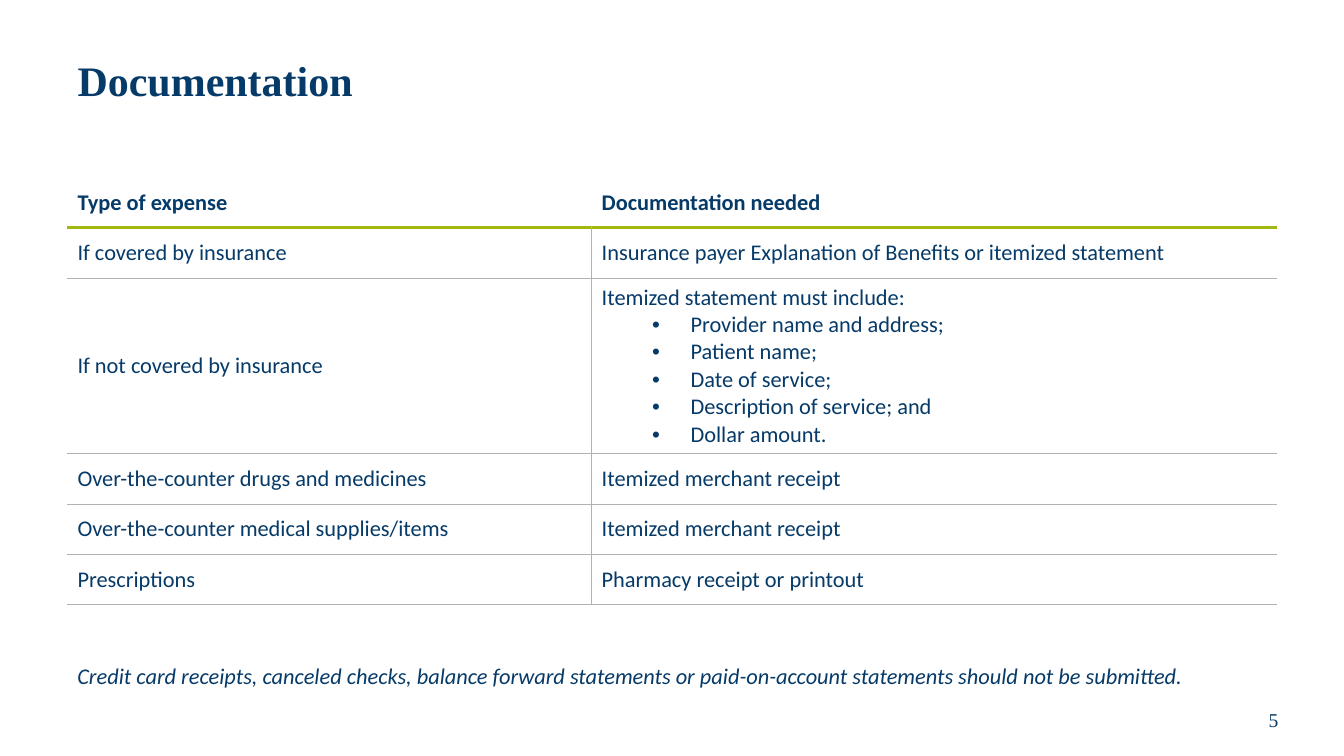
from dataclasses import dataclass

from lxml.etree import SubElement as Sub
from pptx import Presentation
from pptx.dml.color import RGBColor as RGB
from pptx.enum.text import MSO_ANCHOR as Anchor, MSO_AUTO_SIZE as Fit, PP_ALIGN as Align
from pptx.oxml.ns import qn
from pptx.util import Cm, Pt


@dataclass(frozen=True)
class Theme:
    ink: str = "063A68"
    rule: str = "B2B2B2"
    accent: str = "A0B810"
    serif: str = "Times New Roman"
    sans: str = "Calibri"
    title: int = 30
    body: int = 16
    page: int = 14
    thin: float = 0.5
    thick: float = 2.25


THEME = Theme()
LEFT, WIDTH = Cm(1.7), Cm(30.48)
COLS = (Cm(13.21), Cm(17.27))
ROW, TALL = Cm(1.27), Cm(4.42)
ROWS = (
    ("Type of expense", "Documentation needed"),
    ("If covered by insurance", "Insurance payer Explanation of Benefits or itemized statement"),
    ("If not covered by insurance", (
        "Itemized statement must include:",
        "Provider name and address;",
        "Patient name;",
        "Date of service;",
        "Description of service; and",
        "Dollar amount.",
    )),
    ("Over-the-counter drugs and medicines", "Itemized merchant receipt"),
    ("Over-the-counter medical supplies/items", "Itemized merchant receipt"),
    ("Prescriptions", "Pharmacy receipt or printout"),
)


def bullet(para):
    para.level = 1
    props = para._p.get_or_add_pPr()
    props.set("marL", str(Cm(2.24)))
    props.set("indent", str(Cm(-0.97)))
    Sub(props, qn("a:buFont"), typeface="Arial")
    Sub(props, qn("a:buChar"), char="•")


def write(frame, text, size=THEME.body, face=THEME.sans, bold=False,
          italic=False, align=Align.LEFT, space=None):
    lines = (text,) if isinstance(text, str) else text
    for index, line in enumerate(lines):
        para = frame.add_paragraph() if index else frame.paragraphs[0]
        para.alignment = align
        if space:
            para.line_spacing = space
        if index:
            bullet(para)
        run = para.add_run()
        run.text = line
        font = run.font
        font.size, font.name = Pt(size), face
        font.bold, font.italic = bold, italic
        font.color.rgb = RGB.from_string(THEME.ink)


def border(cell, edges):
    props = cell._tc.get_or_add_tcPr()
    for side in "LRTB":
        color, width = edges.get(side, (None, 0))
        line = Sub(props, qn(f"a:ln{side}"), w=str(Pt(width)))
        if color:
            fill = Sub(line, qn("a:solidFill"))
            Sub(fill, qn("a:srgbClr"), val=color)
        else:
            Sub(line, qn("a:noFill"))


def edges(row, col):
    thin, thick = (THEME.rule, THEME.thin), (THEME.accent, THEME.thick)
    if row == 0:
        return {"B": thick}
    inner = "L" if col else "R"
    return {"T": thick if row == 1 else thin, "B": thin, inner: thin}


def add_grid(slide):
    high = ROW * (len(ROWS) - 1) + TALL
    table = slide.shapes.add_table(len(ROWS), len(COLS), LEFT, Cm(4.47), WIDTH, high).table
    table.horz_banding = False
    for col, width in enumerate(COLS):
        table.columns[col].width = width
    for row, texts in enumerate(ROWS):
        table.rows[row].height = ROW if isinstance(texts[1], str) else TALL
        for col, text in enumerate(texts):
            cell = table.cell(row, col)
            write(cell.text_frame, text, bold=row == 0)
            cell.vertical_anchor = Anchor.MIDDLE
            border(cell, edges(row, col))
            cell.fill.background()


def add_title(slide, text):
    title = slide.shapes.title
    title.left, title.top, title.width, title.height = LEFT, Cm(0.64), WIDTH, Cm(2.92)
    frame = title.text_frame
    frame.auto_size, frame.vertical_anchor = Fit.NONE, Anchor.MIDDLE
    write(frame, text, size=THEME.title, face=THEME.serif, bold=True, space=0.9)


def add_text(slide, text, box, anchor=Anchor.TOP, **style):
    frame = slide.shapes.add_textbox(*box).text_frame
    frame.word_wrap, frame.vertical_anchor = True, anchor
    write(frame, text, **style)


def main():
    deck = Presentation()
    deck.slide_width, deck.slide_height = Cm(33.87), Cm(19.05)
    slide = deck.slides.add_slide(deck.slide_layouts[5])
    add_title(slide, "Documentation")
    add_grid(slide)
    add_text(slide, "Credit card receipts, canceled checks, balance forward statements "
             "or paid-on-account statements should not be submitted.",
             (LEFT, Cm(16.56), WIDTH, Cm(0.94)), italic=True)
    add_text(slide, "5", (Cm(30.61), Cm(17.5), Cm(2.97), Cm(1.27)), anchor=Anchor.MIDDLE,
             size=THEME.page, face=THEME.serif, align=Align.CENTER)
    deck.save("out.pptx")


if __name__ == "__main__":
    main()
